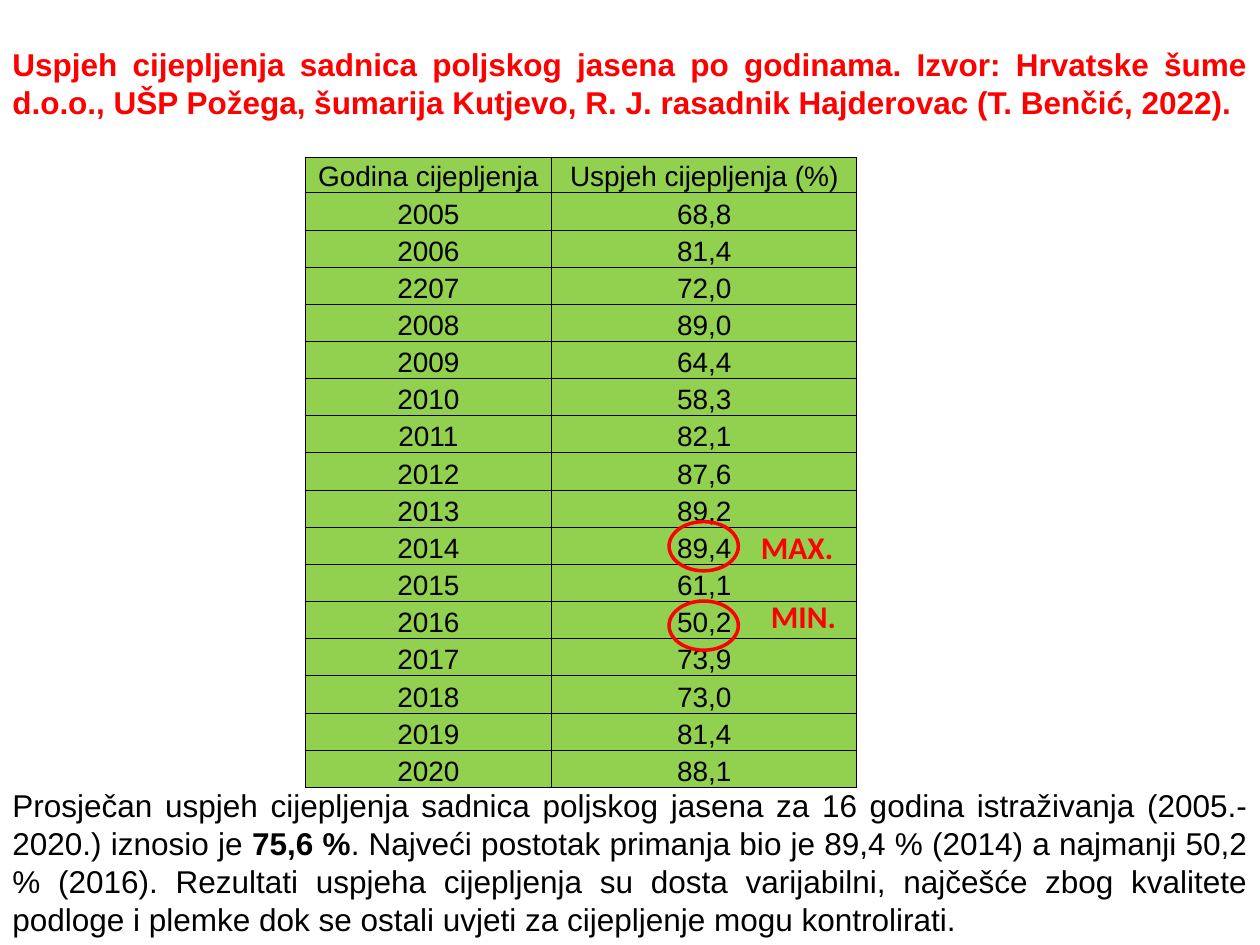
from dataclasses import dataclass

from lxml.etree import SubElement
from pptx import Presentation
from pptx.dml.color import RGBColor as Color
from pptx.enum.shapes import MSO_SHAPE as Kind
from pptx.enum.text import MSO_ANCHOR as Anchor
from pptx.enum.text import MSO_AUTO_SIZE as Fit
from pptx.enum.text import PP_ALIGN as Align
from pptx.oxml.ns import qn
from pptx.slide import Slide
from pptx.table import _Cell as Cell
from pptx.text.text import _Paragraph as Para
from pptx.util import Inches, Pt


@dataclass(frozen=True)
class Theme:
    red: str = "FF0000"
    black: str = "000000"
    green: str = "92D050"
    sans: str = "Arial"
    label: str = "Calibri"
    body: float = 18
    cell: float = 16
    edge: float = 0.5
    ring: float = 2


THEME = Theme()


@dataclass(frozen=True)
class Run:
    text: str
    color: str = THEME.black
    bold: bool = False
    font: str = THEME.sans
    size: float = THEME.body


@dataclass(frozen=True)
class Box:
    left: float
    top: float
    width: float
    height: float
    runs: tuple[Run, ...] = ()
    align: Align = Align.LEFT
    wrap: bool = True

    def frame(self) -> tuple[Inches, ...]:
        return tuple(map(Inches, (self.left, self.top, self.width, self.height)))


ROWS = (
    ("Godina cijepljenja", "Uspjeh cijepljenja (%)"),
    ("2005", "68,8"),
    ("2006", "81,4"),
    ("2207", "72,0"),
    ("2008", "89,0"),
    ("2009", "64,4"),
    ("2010", "58,3"),
    ("2011", "82,1"),
    ("2012", "87,6"),
    ("2013", "89,2"),
    ("2014", "89,4"),
    ("2015", "61,1"),
    ("2016", "50,2"),
    ("2017", "73,9"),
    ("2018", "73,0"),
    ("2019", "81,4"),
    ("2020", "88,1"),
)
GRID = Box(2.42, 1.25, 4.38, 5)
COLS = (1.96, 2.42)
HEAD = 0.28

TITLE = Box(0, 0.31, 10, 0.71, (
    Run("Uspjeh cijepljenja sadnica poljskog jasena po godinama. Izvor: "
        "Hrvatske šume d.o.o., UŠP Požega, šumarija Kutjevo, R. J. rasadnik "
        "Hajderovac (T. Benčić, 2022).", THEME.red, True),
), Align.JUSTIFY)
NOTE = Box(0, 6.19, 10, 1.31, (
    Run("Prosječan uspjeh cijepljenja sadnica poljskog jasena za 16 godina "
        "istraživanja (2005.-2020.) iznosio je "),
    Run("75,6 %", bold=True),
    Run(". Najveći postotak primanja bio je 89,4 % (2014) a najmanji 50,2 % "
        "(2016). Rezultati uspjeha cijepljenja su dosta varijabilni, najčešće "
        "zbog kvalitete podloge i plemke dok se ostali uvjeti za cijepljenje "
        "mogu kontrolirati."),
), Align.JUSTIFY)
RINGS = tuple(Box(5.31, top, 0.55, 0.39) for top in (4.14, 4.77))
TAGS = tuple(
    Box(left, top, width, 0.4, (Run(text, THEME.red, True, THEME.label),), wrap=False)
    for text, left, top, width in (("MAX.", 5.94, 4.14, 0.78), ("MIN.", 6.02, 4.69, 0.72))
)


def add_run(para: Para, run: Run) -> None:
    part = para.add_run()
    part.text = run.text
    font = part.font
    font.name, font.size, font.bold = run.font, Pt(run.size), run.bold
    font.color.rgb = Color.from_string(run.color)


def add_text(slide: Slide, box: Box) -> None:
    frame = slide.shapes.add_textbox(*box.frame()).text_frame
    frame.word_wrap = box.wrap
    frame.auto_size = Fit.SHAPE_TO_FIT_TEXT
    para = frame.paragraphs[0]
    para.alignment = box.align
    for run in box.runs:
        add_run(para, run)


def add_ring(slide: Slide, box: Box) -> None:
    ring = slide.shapes.add_shape(Kind.OVAL, *box.frame())
    ring.shadow.inherit = False
    ring.fill.background()
    ring.line.color.rgb = Color.from_string(THEME.red)
    ring.line.width = Pt(THEME.ring)


def add_edges(cell: Cell) -> None:
    props = cell._tc.get_or_add_tcPr()
    for side in ("L", "R", "T", "B"):
        line = SubElement(props, qn(f"a:ln{side}"), w=str(Pt(THEME.edge)))
        fill = SubElement(line, qn("a:solidFill"))
        SubElement(fill, qn("a:srgbClr"), val=THEME.black)


def fill_cell(cell: Cell, text: str) -> None:
    add_edges(cell)
    cell.fill.solid()
    cell.fill.fore_color.rgb = Color.from_string(THEME.green)
    cell.vertical_anchor = Anchor.BOTTOM
    cell.margin_left = cell.margin_top = cell.margin_right = Inches(0.01)
    cell.margin_bottom = 0
    para = cell.text_frame.paragraphs[0]
    para.alignment = Align.CENTER
    add_run(para, Run(text, size=THEME.cell))


def add_grid(slide: Slide) -> None:
    table = slide.shapes.add_table(len(ROWS), len(COLS), *GRID.frame()).table
    table.horz_banding = False
    for col, width in zip(table.columns, COLS):
        col.width = Inches(width)
    step = (GRID.height - HEAD) / (len(ROWS) - 1)
    for i, row in enumerate(ROWS):
        table.rows[i].height = Inches(step if i else HEAD)
        for j, text in enumerate(row):
            fill_cell(table.cell(i, j), text)


def main() -> None:
    deck = Presentation()
    deck.slide_width, deck.slide_height = Inches(10), Inches(7.5)
    slide = deck.slides.add_slide(deck.slide_layouts[6])
    add_grid(slide)
    for box in (TITLE, NOTE):
        add_text(slide, box)
    for ring in RINGS:
        add_ring(slide, ring)
    for tag in TAGS:
        add_text(slide, tag)
    deck.save("out.pptx")


if __name__ == "__main__":
    main()
